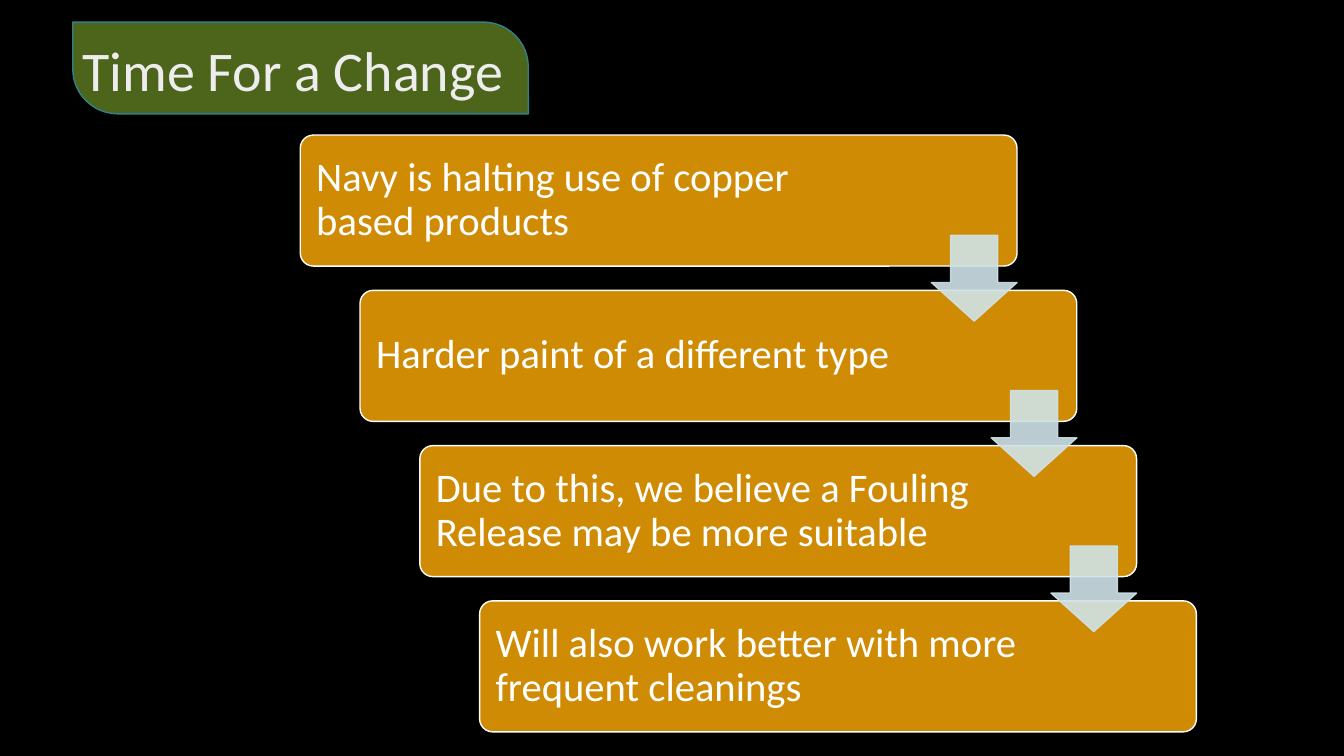
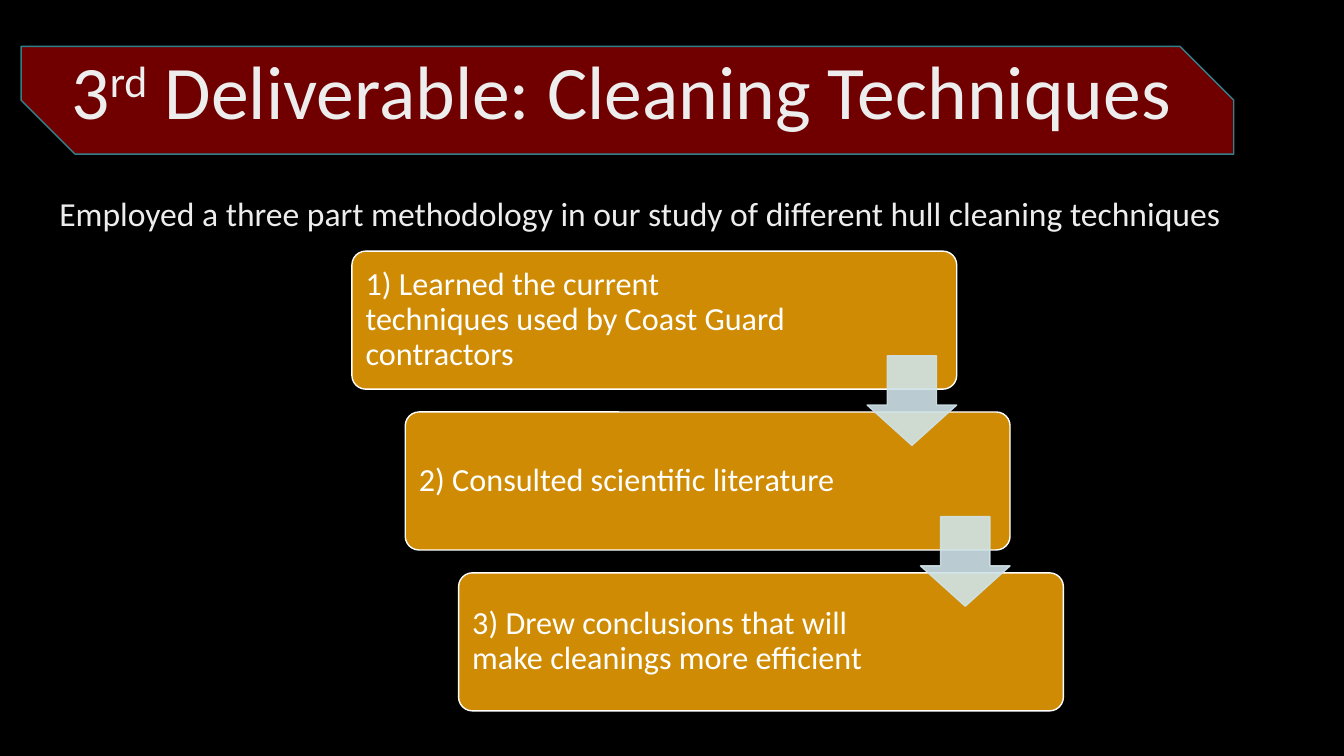
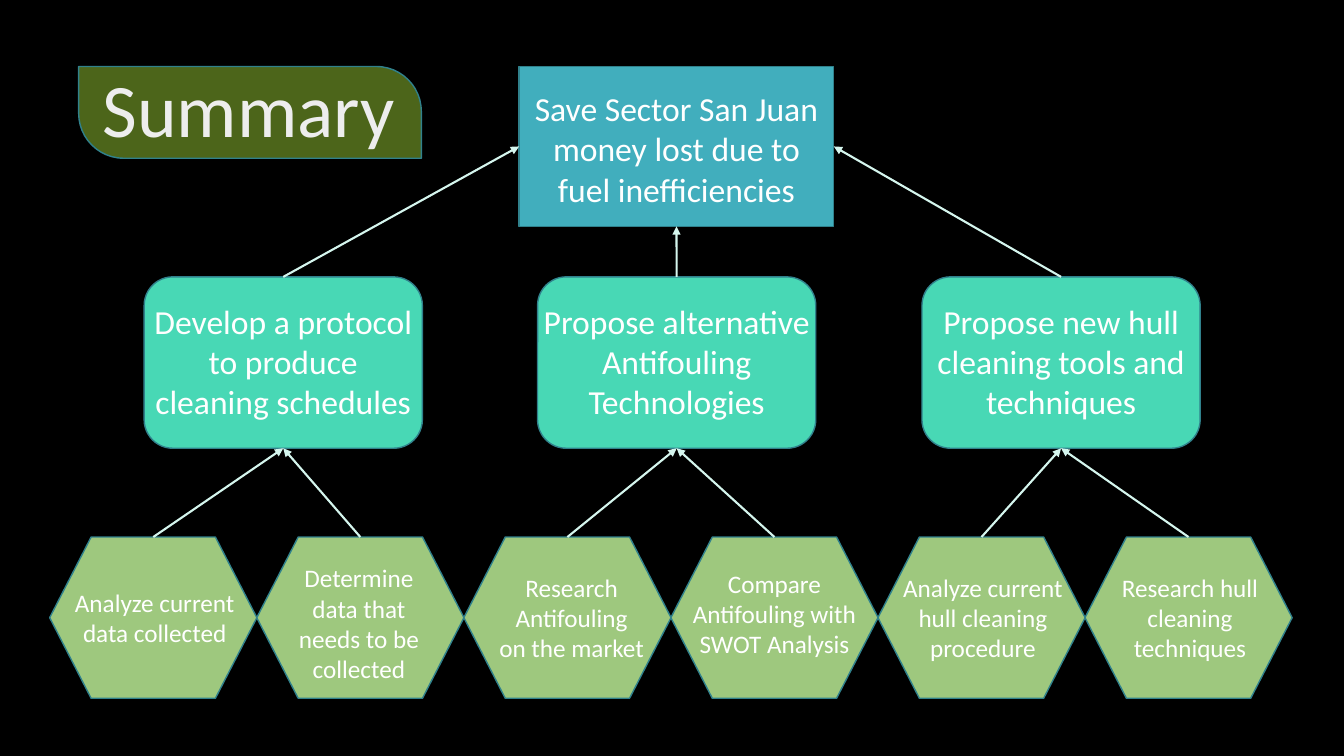
import pptx
import pptx.util
import pptx.dml.color
import pptx.enum.shapes
import pptx.enum.text
import pptx.oxml
import pptx.oxml.ns

Pt = pptx.util.Pt
SHAPE = pptx.enum.shapes.MSO_SHAPE
ALIGN = pptx.enum.text.PP_ALIGN
MIDDLE = pptx.enum.text.MSO_ANCHOR.MIDDLE

FONT = "Calibri"
COLORS = {
    "background": "000000",
    "heading": "EDEDED",
    "white": "FFFFFF",
    "edge": "30818C",
    "green": "7DA62C",
    "red": "C00000",
    "step": "CF8B03",
    "arrow": "CFE3E8",
    "mission": "41AEBD",
    "goal": "48D8B5",
    "task": "9EC87E",
    "link": "D5F6EE",
}
TOP, LEFT, BOTTOM, RIGHT = range(4)


def color(name):
    return pptx.dml.color.RGBColor.from_string(COLORS[name])


def add_block(slide, preset, box, fill, edge="edge", adjustments=()):
    block = slide.shapes.add_shape(preset, *map(Pt, box))
    block.shadow.inherit = False
    block.fill.solid()
    block.fill.fore_color.rgb = color(fill)
    block.line.color.rgb = color(edge)
    block.line.width = Pt(1)
    for index, value in enumerate(adjustments):
        block.adjustments[index] = value
    return block


def set_opacity(block, percent, colors_path):
    for tint in block._element.spPr.xpath(colors_path):
        alpha = pptx.oxml.parse_xml(
            f'<a:alpha {pptx.oxml.ns.nsdecls("a")} val="{percent * 1000}"/>')
        tint.append(alpha)


def style_text(frame, size, tint="white", align=ALIGN.LEFT, spacing=1.0):
    frame.word_wrap = True
    frame.vertical_anchor = MIDDLE
    for paragraph in frame.paragraphs:
        paragraph.alignment = align
        paragraph.line_spacing = spacing
        for run in paragraph.runs:
            run.font.name = FONT
            run.font.size = Pt(size)
            run.font.color.rgb = color(tint)


def add_label(slide, text, box, size, **style):
    frame = slide.shapes.add_textbox(*map(Pt, box)).text_frame
    frame.text = text
    style_text(frame, size, **style)
    return frame


def add_title(slide, text, box, size, banner_box, preset, fill, opacity,
              cut, raised="", rest=""):
    banner = add_block(slide, preset, banner_box, fill, adjustments=(0, cut))
    set_opacity(banner, opacity, "./a:solidFill/a:srgbClr")
    frame = add_label(slide, text, box, size)
    paragraph = frame.paragraphs[0]
    if raised:
        ordinal = paragraph.add_run()
        ordinal.text = raised
        ordinal.font._element.set("baseline", "30000")
        paragraph.add_run().text = rest
    style_text(frame, size, tint="heading", spacing=0.9)


def add_green_title(slide, text, box, size, banner_box):
    add_title(slide, text, box, size, banner_box,
              SHAPE.ROUND_2_DIAG_RECTANGLE, "green", 61, 0.49)


def add_staircase(slide, steps, left, top, width, height, shift, pitch,
                  arrow_size, text_size):
    for index, text in enumerate(steps):
        box = (left + index * shift, top + index * pitch, width, height)
        step = add_block(slide, SHAPE.ROUNDED_RECTANGLE, box, "step", "white",
                         (0.1,))
        frame = step.text_frame
        frame.text = text
        frame.margin_left = Pt(text_size * 0.3)
        frame.margin_right = Pt(arrow_size + 48)
        style_text(frame, text_size, spacing=0.9)

    for index in range(len(steps) - 1):
        arrow_left = left + index * shift + width - arrow_size
        gap_middle = top + index * pitch + (height + pitch) / 2
        box = (arrow_left, gap_middle - arrow_size / 2, arrow_size, arrow_size)
        arrow = add_block(slide, SHAPE.DOWN_ARROW, box, "arrow", "arrow",
                          (0.55, 0.45))
        set_opacity(arrow, 90, ".//a:srgbClr")


def add_node(slide, preset, box, fill, text, size, label_width, nudge=(0, 0)):
    node = add_block(slide, preset, box, fill)
    left, top, width, height = box
    label_left = left + (width - label_width) / 2 + nudge[0]
    add_label(slide, text, (label_left, top + nudge[1], label_width, height),
              size, align=ALIGN.CENTER)
    return node


def link_nodes(slide, source, target, target_side):
    link = slide.shapes.add_connector(
        pptx.enum.shapes.MSO_CONNECTOR.STRAIGHT, 0, 0, 0, 0)
    link.begin_connect(source, TOP)
    link.end_connect(target, target_side)
    link.line.color.rgb = color("link")
    link.line.width = Pt(1.5)
    namespace = pptx.oxml.ns.nsdecls("a")
    link.line._get_or_add_ln().append(
        pptx.oxml.parse_xml(f'<a:tailEnd {namespace} type="triangle"/>'))
    link._element.spPr.append(
        pptx.oxml.parse_xml(f"<a:effectLst {namespace}/>"))


def build_change(slide):
    steps = [
        "Navy is halting use of copper based products",
        "Harder paint of a different type",
        "Due to this, we believe a Fouling Release may be more suitable",
        "Will also work better with more frequent cleanings",
    ]
    add_staircase(slide, steps, left=214.5, top=96.5, width=512, height=93.6,
                  shift=42.7, pitch=110.9, arrow_size=61.2, text_size=29)
    add_green_title(slide, "Time For a Change", (52, 0, 370, 104.4), 40,
                    (52, 15.8, 325.4, 65.5))


def build_techniques(slide):
    add_title(slide, "3", (44, 15.8, 847.4, 104.4), 54,
              (15.1, 33.1, 866.2, 77), SHAPE.SNIP_2_DIAG_RECTANGLE,
              "red", 59, 0.5, "rd", " Deliverable: Cleaning Techniques")
    add_label(slide, "Employed a three part methodology in our study of "
              "different hull cleaning techniques",
              (35.3, 134, 903, 36), 24, tint="heading")
    steps = [
        "1) Learned the current techniques used by Coast Guard contractors",
        "2) Consulted scientific literature",
        "3) Drew conclusions that will make cleanings more efficient",
    ]
    add_staircase(slide, steps, left=251.4, top=179.4, width=432, height=98.6,
                  shift=38.1, pitch=114.9, arrow_size=64, text_size=23)


def build_summary(slide):
    add_green_title(slide, "Summary", (66.2, 28.8, 828, 104.4), 54,
                    (56.2, 47.5, 244.8, 65.5))
    mission = add_node(
        slide, SHAPE.RECTANGLE, (370.8, 47.5, 224.8, 114.2), "mission",
        "Save Sector San Juan money lost due to fuel inefficiencies",
        24, 224.8, (0, 1.4))

    goals = [
        (103, "Develop a protocol to produce cleaning schedules", LEFT),
        (384, "Propose alternative Antifouling Technologies", BOTTOM),
        (658.6, "Propose new hull cleaning tools and techniques", RIGHT),
    ]
    goal_nodes = []
    for left, text, mission_side in goals:
        label_width = 230 if mission_side == BOTTOM else 202
        goal = add_node(slide, SHAPE.ROUNDED_RECTANGLE,
                        (left, 197.8, 198.7, 122.4), "goal", text, 24,
                        label_width, (0, -1))
        link_nodes(slide, goal, mission, mission_side)
        goal_nodes.append(goal)

    tasks = [
        ("Analyze current data collected", 132, (1, 0)),
        ("Determine data that needs to be collected", 117, (-1, 4)),
        ("Research\nAntifouling\non the market", 140, (3, 0)),
        ("Compare Antifouling with SWOT Analysis", 140, (0, -3)),
        ("Analyze current\nhull cleaning procedure", 140, (1, 0)),
        ("Research hull cleaning techniques", 140, (1, 0)),
    ]
    for index, (text, label_width, nudge) in enumerate(tasks):
        task = add_node(slide, SHAPE.FLOWCHART_PREPARATION,
                        (35.5 + index * 147.9, 383.6, 148, 115.2), "task",
                        text, 18, label_width, nudge)
        link_nodes(slide, task, goal_nodes[index // 2], BOTTOM)


def main():
    deck = pptx.Presentation()
    deck.slide_width, deck.slide_height = Pt(960), Pt(540)
    backdrop = deck.slide_master.background.fill
    backdrop.solid()
    backdrop.fore_color.rgb = color("background")
    for build in (build_change, build_techniques, build_summary):
        build(deck.slides.add_slide(deck.slide_layouts[6]))
    deck.save("out.pptx")


if __name__ == "__main__":
    main()
